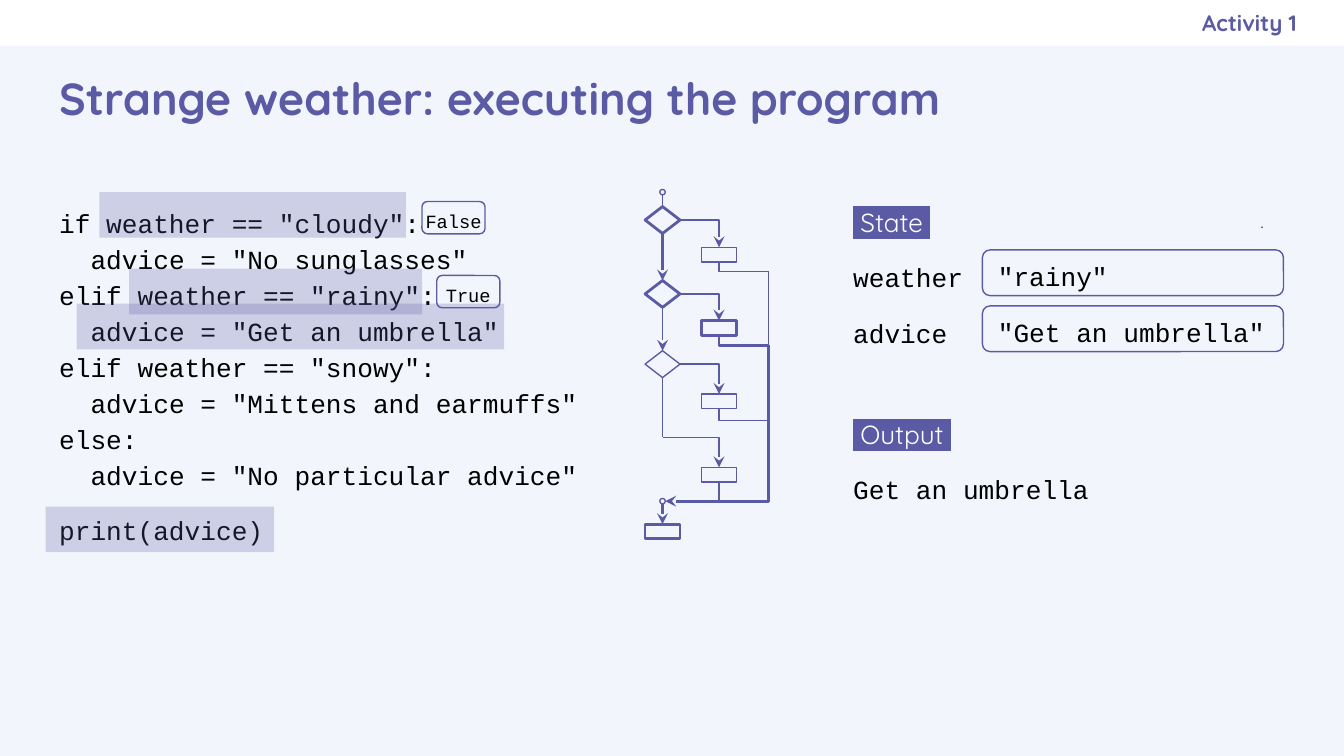
import dataclasses
import pptx
import pptx.util
import pptx.dml.color
import pptx.enum.shapes
import pptx.enum.text
import pptx.oxml.ns
from lxml import etree

Pt = pptx.util.Pt
Kind = pptx.enum.shapes.MSO_SHAPE
Link = pptx.enum.shapes.MSO_CONNECTOR
Align = pptx.enum.text.PP_ALIGN
Anchor = pptx.enum.text.MSO_ANCHOR
qn = pptx.oxml.ns.qn


@dataclasses.dataclass(frozen=True)
class Theme:
    ink: str = "5B5BA5"
    page: str = "F2F6FC"
    white: str = "FFFFFF"
    black: str = "000000"
    sans: str = "Quicksand"
    mono: str = "Courier New"
    head: float = 24
    text: float = 14
    tag: float = 12
    small: float = 10
    thin: float = 0.75
    thick: float = 1.5


T = Theme()


def tint(name):
    return pptx.dml.color.RGBColor.from_string(name)


def place(shape, box):
    shape.left, shape.top, shape.width, shape.height = map(Pt, box)


def write(shape, lines, face=T.mono, size=T.text, color=T.black, bold=False,
          align=Align.LEFT, anchor=Anchor.TOP, pad=(7.2, 7.2, 7.2, 7.2), lead=1.15):
    frame = shape.text_frame
    frame.word_wrap = True
    frame.auto_size = pptx.enum.text.MSO_AUTO_SIZE.NONE
    frame.vertical_anchor = anchor
    frame.margin_left, frame.margin_top, frame.margin_right, frame.margin_bottom = map(Pt, pad)
    frame.text = "\n".join(lines)
    for para in frame.paragraphs:
        para.alignment = align
        para.line_spacing = lead
        para.space_before = Pt(0)
        font = para.font
        font.name, font.size, font.bold = face, Pt(size), bold
        font.color.rgb = tint(color)
    return frame


def indent(para, left):
    props = para._p.get_or_add_pPr()
    props.set("marL", str(Pt(left)))
    props.set("indent", "0")
    props.insert_element_before(props.makeelement(qn("a:buNone")), "a:tabLst", "a:defRPr", "a:extLst")


def draw(slide, kind, box, line=T.thin, fill=None, alpha=None):
    shape = slide.shapes.add_shape(kind, *map(Pt, box))
    shape.shadow.inherit = False
    if fill:
        shape.fill.solid()
        shape.fill.fore_color.rgb = tint(fill)
    else:
        shape.fill.background()
    if alpha:
        color = shape._element.spPr.find(qn("a:solidFill"))[0]
        etree.SubElement(color, qn("a:alpha"), val=str(alpha * 1000))
    if line:
        shape.line.width = Pt(line)
        shape.line.color.rgb = tint(T.ink)
    else:
        shape.line.fill.background()
    return shape


def wire(slide, start, end, width=T.thin, arrow=False, kind=Link.STRAIGHT):
    link = slide.shapes.add_connector(kind, *map(Pt, (*start, *end)))
    link.line.width = Pt(width)
    link.line.color.rgb = tint(T.ink)
    props = link._element.spPr
    if arrow:
        etree.SubElement(props.find(qn("a:ln")), qn("a:tailEnd"), type="stealth")
    etree.SubElement(props, qn("a:effectLst"))
    return link


def bend(slide, start, end, width=T.thin, arrow=False, down=False):
    link = wire(slide, start, end, width, arrow, Link.ELBOW)
    props = link._element.spPr
    props.find(qn("a:prstGeom")).set("prst", "bentConnector2")
    if down:
        (x, y), (u, v) = start, end
        wide, high = abs(v - y), abs(u - x)
        place(link, ((x + u - wide) / 2, (y + v - high) / 2, wide, high))
        form = props.find(qn("a:xfrm"))
        form.set("rot", str((270 if u > x else 90) * 60000))
        form.set("flipH", "1" if u > x else "0")


def join(slide, first, last, width=T.thin, arrow=False):
    link = wire(slide, (0, 0), (0, 0), width, arrow)
    link.begin_connect(first, 2)
    link.end_connect(last, 0)


def header(slide, tag, title, box):
    x, y, w, h = box
    bar = draw(slide, Kind.RECTANGLE, (x, y, w, 24.5), None, T.white)
    slide.shapes._spTree.insert(2, bar._element)
    place(tag, (x + 414, y, 280.8, 24.5))
    frame = write(tag, ["Activity 1"], T.sans, T.tag, T.ink, True, Align.RIGHT,
                  Anchor.MIDDLE, (7.2, 7.2, 0, 7.2), 1)
    indent(frame.paragraphs[0], 0)
    place(title, (x + 24.5, y + 24.5, w - 49, h - 24.5))
    write(title, ["Strange weather: executing the program"], T.sans, T.head, T.ink,
          True, anchor=Anchor.MIDDLE, lead=1)


def code(slide, body, box):
    x, y, w, h = box
    place(body, box)
    lines = ['if weather == "cloudy":', 'advice = "No sunglasses"',
             'elif weather == "rainy":', 'advice = "Get an umbrella"',
             'elif weather == "snowy":', 'advice = "Mittens and earmuffs"',
             'else:', 'advice = "No particular advice"', 'print(advice)']
    paras = write(body, lines).paragraphs
    for para in paras:
        indent(para, 16.8 if para.text.startswith("advice") else 0)
    paras[-1].space_before = Pt(10)
    for left, top, wide in ((28.8, 1.4, 164.2), (44.6, 42.5, 157),
                            (16.6, 61.2, 229), (0, 169.9, 122.4)):
        draw(slide, Kind.RECTANGLE, (x + left, y + top, wide, 24.5), None, T.ink, 25)
    for left, top, word in ((201.6, 6.5, "False"), (209.5, 46.1, "True")):
        badge = draw(slide, Kind.ROUNDED_RECTANGLE, (x + left, y + top, 33.8, 17.3))
        write(badge, [word], size=T.small, align=Align.CENTER,
              anchor=Anchor.MIDDLE, pad=(0, 1.4, 0, 0))


def flow(slide, box):
    x, y, w, h = box
    wide, high, tall, dot = 18.7, 7.9, 14.4, 2.9
    main, side, rail = x + wide / 2, x + 39.6, x + w
    goal = y + 167

    def ring(mid):
        return draw(slide, Kind.OVAL, (main - dot / 2, mid - dot / 2, dot, dot))

    def step(mid, top, width=T.thin):
        return draw(slide, Kind.RECTANGLE, (mid - wide / 2, top, wide, high), width)

    tests = [draw(slide, Kind.FLOWCHART_DECISION, (x, y + top, wide, tall), width)
             for top, width in ((9.2, T.thick), (48.8, T.thick), (86.4, T.thin))]
    begin, close = ring(y + dot / 2), ring(goal)
    final = step(main, y + 179.3, T.thick)
    wire(slide, (main, y + dot), (main, y + 9.2))
    join(slide, tests[0], tests[1], T.thick, True)
    join(slide, tests[1], tests[2], T.thin, True)
    wire(slide, (main, goal + dot / 2), (main, y + 179.3), T.thick, True).end_connect(final, 0)
    turn = y + 132.8
    wire(slide, (main, y + 100.8), (main, turn)).begin_connect(tests[2], 2)

    starts = [(x + wide, y + top + tall / 2) for top in (9.2, 48.8, 86.4)] + [(main, turn)]
    merges = [y + 43.9, y + 83.5, y + 123.8]
    for row, start in enumerate(starts):
        width = T.thick if row == 1 else T.thin
        top = y + 31 + 39.3 * row
        task = step(side, top, width)
        bend(slide, start, (side, top), width, True)
        if row < len(merges):
            bend(slide, (side, top + high), (rail, merges[row]), width, down=True)
        else:
            wire(slide, (side, top + high), (side, goal)).begin_connect(task, 2)
    wire(slide, (rail, merges[0]), (rail, merges[1]))
    bend(slide, (rail, merges[1]), (side, goal), T.thick, down=True)
    wire(slide, (side, goal), (main + dot / 2, goal), T.thick, True)


def note(slide, box, lines, **style):
    return write(slide.shapes.add_textbox(*map(Pt, box)), lines, **style)


def label(slide, box, word):
    frame = note(slide, box, [f" {word} "], face=T.sans, color=T.white)
    props = frame.paragraphs[0].runs[0]._r.get_or_add_rPr()
    mark = etree.SubElement(props, qn("a:highlight"))
    etree.SubElement(mark, qn("a:srgbClr"), val=T.ink)


def state(slide, box):
    x, y, w, h = box
    label(slide, (x, y, 128, 28.8), "State")
    draw(slide, Kind.OVAL, (x + 226, y + 20.9, 0.2, 0.2))
    for row, (name, value) in enumerate((("weather", '"rainy"'), ("advice", '"Get an umbrella"'))):
        top = y + 29.5 + 30 * row
        note(slide, (x, top, 96.5, 28.8), [name])
        cell = draw(slide, Kind.ROUNDED_RECTANGLE, (x + 76.3, top + 3.6, w - 76.3, 24.5))
        write(cell, [value], anchor=Anchor.MIDDLE, pad=(7.2, 1.4, 7.2, 0))


def output(slide, box):
    x, y, w, h = box
    label(slide, (x, y, 128, 28.8), "Output")
    note(slide, (x, y + 29.5, w, 28.8), ["Get an umbrella"])


def main():
    deck = pptx.Presentation()
    deck.slide_width, deck.slide_height = Pt(720), Pt(405)
    slide = deck.slides.add_slide(deck.slide_layouts[3])
    slide.background.fill.solid()
    slide.background.fill.fore_color.rgb = tint(T.page)
    title, body, tag = slide.placeholders
    header(slide, tag, title, (0, 0, 720, 80))
    code(slide, body, (24.5, 101.5, 322.6, 198.7))
    flow(slide, (345.6, 101.5, 66.2, 187.2))
    state(slide, (450, 100.8, 237.6, 88))
    output(slide, (450, 214.6, 245.5, 58.3))
    deck.save("out.pptx")


if __name__ == "__main__":
    main()
